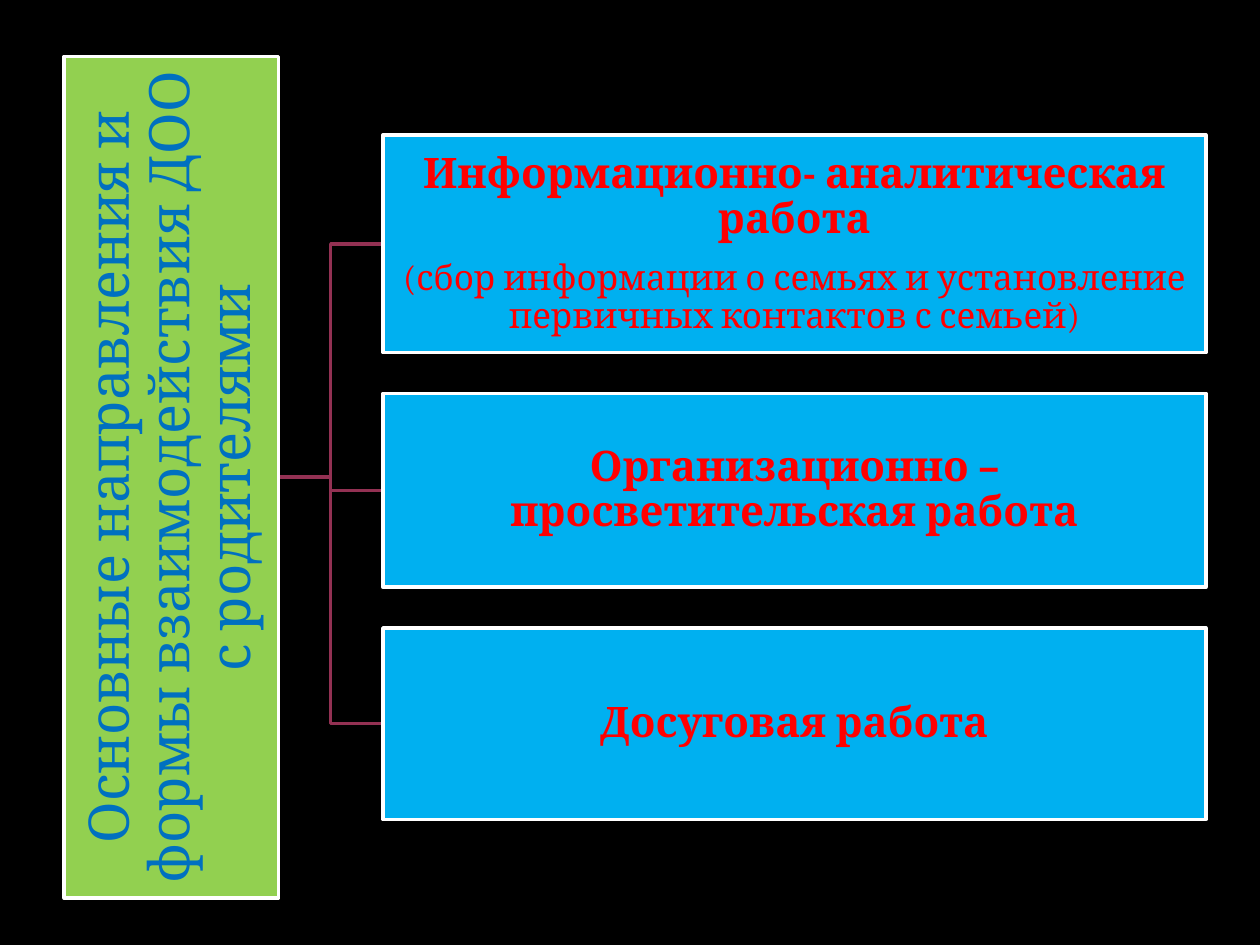
from dataclasses import dataclass

from pptx import Presentation
from pptx.dml.color import RGBColor as Color
from pptx.enum.shapes import MSO_SHAPE as ShapeKind
from pptx.enum.text import MSO_ANCHOR as Anchor, PP_ALIGN as Align
from pptx.shapes.autoshape import Shape
from pptx.slide import Slide
from pptx.util import Cm, Pt


@dataclass(frozen=True)
class Theme:
    background: Color = Color(0, 0, 0)
    border: Color = Color(255, 255, 255)
    branch: Color = Color(0x93, 0x31, 0x53)
    root_fill: Color = Color(0x92, 0xD0, 0x50)
    root_text: Color = Color(0x00, 0x70, 0xC0)
    topic_fill: Color = Color(0x00, 0xB0, 0xF0)
    topic_text: Color = Color(0xFF, 0x00, 0x00)
    font: str = "Cambria"
    root_size: Pt = Pt(32)
    topic_size: Pt = Pt(24)
    detail_size: Pt = Pt(20)
    line_width: Pt = Pt(2)
    line_spacing: float = 0.9
    space_after: Pt = Pt(10)
    inset: Cm = Cm(0.05)


@dataclass(frozen=True)
class Line:
    text: str
    size: Pt
    bold: bool = False


@dataclass(frozen=True)
class Box:
    left: float
    top: float
    width: float
    height: float
    lines: tuple[Line, ...]

    @property
    def middle(self) -> float:
        return self.top + self.height / 2


THEME = Theme()
TOPIC_LEFT, TOPIC_WIDTH, TOPIC_GAP = 7.72, 16.59, 0.82
FIRST_TOPIC_TOP = 2.72

# The root is laid out horizontally and then turned a quarter to the left.
ROOT = Box(-5.03, 7.46, 16.97, 4.32, (
    Line("Основные направления и формы взаимодействия ДОО с родителями", THEME.root_size),
))
TOPICS = (
    (4.39, (
        Line("Информационно- аналитическая работа", THEME.topic_size, True),
        Line("(сбор информации о семьях и установление первичных контактов с семьей)",
             THEME.detail_size),
    )),
    (3.91, (Line("Организационно – просветительская работа", THEME.topic_size, True),)),
    (3.86, (Line("Досуговая работа", THEME.topic_size, True),)),
)


def stack_topics() -> list[Box]:
    boxes = []
    top = FIRST_TOPIC_TOP
    for height, lines in TOPICS:
        boxes.append(Box(TOPIC_LEFT, top, TOPIC_WIDTH, height, lines))
        top += height + TOPIC_GAP
    return boxes


def add_box(slide: Slide, box: Box, fill: Color, text_color: Color) -> Shape:
    shape = slide.shapes.add_shape(
        ShapeKind.RECTANGLE, Cm(box.left), Cm(box.top), Cm(box.width), Cm(box.height))
    shape.shadow.inherit = False
    shape.fill.solid()
    shape.fill.fore_color.rgb = fill
    shape.line.color.rgb = THEME.border
    shape.line.width = THEME.line_width

    frame = shape.text_frame
    frame.word_wrap = True
    frame.vertical_anchor = Anchor.MIDDLE
    frame.margin_left = frame.margin_right = THEME.inset
    frame.margin_top = frame.margin_bottom = THEME.inset
    for index, line in enumerate(box.lines):
        paragraph = frame.add_paragraph() if index else frame.paragraphs[0]
        paragraph.text = line.text
        paragraph.alignment = Align.CENTER
        paragraph.line_spacing = THEME.line_spacing
        paragraph.space_after = THEME.space_after
        font = paragraph.font
        font.name, font.size, font.bold = THEME.font, line.size, line.bold
        font.color.rgb = text_color
    return shape


def add_branch(slide: Slide, root: Box, topic: Box) -> None:
    """Draw the stepped line from the turned root's right side to a topic."""
    start = root.left + (root.width + root.height) / 2
    bend = (start + topic.left) / 2
    builder = slide.shapes.build_freeform(Cm(start), Cm(root.middle))
    builder.add_line_segments(
        [(Cm(bend), Cm(root.middle)), (Cm(bend), Cm(topic.middle)),
         (Cm(topic.left), Cm(topic.middle))], close=False)
    branch = builder.convert_to_shape()
    branch.shadow.inherit = False
    branch.fill.background()
    branch.line.color.rgb = THEME.branch
    branch.line.width = THEME.line_width


def main() -> None:
    presentation = Presentation()
    presentation.slide_width, presentation.slide_height = Cm(25.4), Cm(19.05)
    slide = presentation.slides.add_slide(presentation.slide_layouts[6])
    slide.background.fill.solid()
    slide.background.fill.fore_color.rgb = THEME.background

    topics = stack_topics()
    for topic in topics:
        add_branch(slide, ROOT, topic)
    root_shape = add_box(slide, ROOT, THEME.root_fill, THEME.root_text)
    root_shape.rotation = 270
    for topic in topics:
        add_box(slide, topic, THEME.topic_fill, THEME.topic_text)
    presentation.save("out.pptx")


if __name__ == "__main__":
    main()
